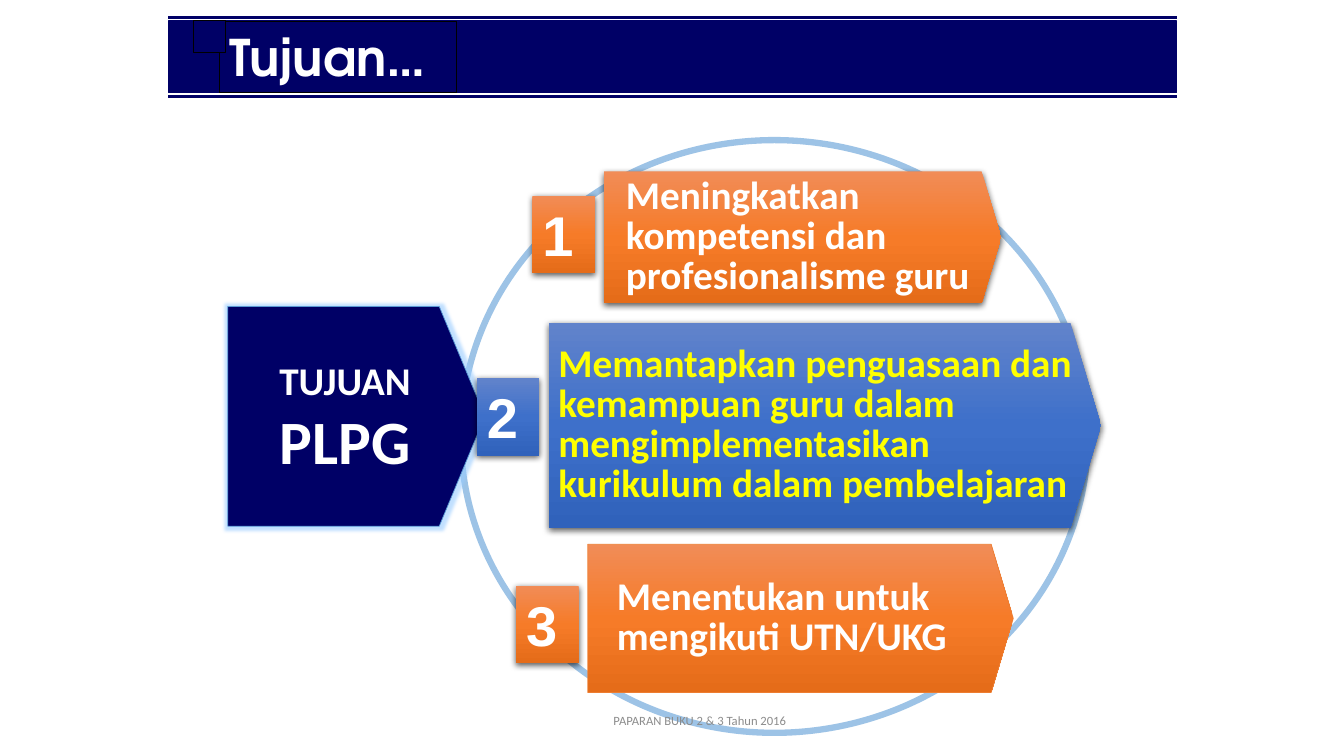
from lxml.etree import SubElement
from pptx import Presentation
from pptx.dml.color import RGBColor
from pptx.enum.shapes import MSO_CONNECTOR, MSO_SHAPE
from pptx.enum.text import MSO_ANCHOR, PP_ALIGN
from pptx.oxml.ns import qn
from pptx.util import Emu, Pt

# Content: lengths in px, 100 px to the inch
PX = 9144
SLIDE_SIZE = (1333, 750)
NAVY, WHITE, YELLOW, BLACK = "000066", "FFFFFF", "FFFF00", "000000"
ORANGE = ("F18C57", "F67B28", "E56C19")
BLUE = ("6183CB", "3E70CA", "3062BB")
CIRCLE_BOX = (457, 139, 622, 588)
GOAL_ADJUST = 0.149
TAG_SIZE = (62, 77)
TAG_GAP = 9  # between a number tag and its goal arrow

GOALS = [
    dict(text="Meningkatkan kompetensi dan profesionalisme guru",
         box=(599, 170, 394, 131), tag_top=194, indent=12,
         fill=ORANGE, color=WHITE, line=None),
    dict(text="Memantapkan penguasaan dan kemampuan guru dalam "
              "mengimplementasikan kurikulum dalam pembelajaran",
         box=(544, 320, 548, 204), tag_top=375, indent=0,
         fill=BLUE, color=YELLOW, line=None),
    dict(text="Menentukan untuk mengikuti UTN/UKG",
         box=(583, 540, 422, 147), tag_top=581, indent=19,
         fill=ORANGE, color=WHITE, line=("ED7D31", 0.5)),
]
LABEL_BOX = (226, 304, 255, 218)
LABEL_LINES = [("TUJUAN", 28), ("PLPG", 44)]
FOOTER, FOOTER_BOX = "PAPARAN BUKU 2 & 3 Tahun 2016", (525, 695, 338, 40)
TITLE = "Tujuan…"
BANNER_BOX = (167, 21, 1000, 71)
TITLE_BOX = (218, 21, 235, 71)
CORNER_BOX = (192, 20, 32, 32)
RULE_TOPS = (96, 17)


def rgb(value):
    return RGBColor.from_string(value)


def emu(*lengths):
    return [Emu(length * PX) for length in lengths]


def set_line(line, style):
    if style is None:
        line.fill.background()
    else:
        line.color.rgb = rgb(style[0])
        line.width = Pt(style[1])


def set_gradient(fill, colors):
    fill.gradient()
    fill.gradient_angle = 270
    stops = fill._xPr.find(qn("a:gradFill")).find(qn("a:gsLst"))
    for stop in list(stops):
        stops.remove(stop)
    for index, color in enumerate(colors):
        stop = SubElement(stops, qn("a:gs"), pos=str(index * 50000))
        SubElement(stop, qn("a:srgbClr"), val=color)


def add_effect(shape, name, color, alpha, **settings):
    effects = shape._element.spPr.find(qn("a:effectLst"))
    effect = SubElement(effects, qn(name), **settings)
    tint = SubElement(effect, qn("a:srgbClr"), val=color)
    SubElement(tint, qn("a:alpha"), val=str(alpha * 1000))


def add_shadow(shape):
    add_effect(shape, "a:outerShdw", BLACK, 63, blurRad=str(Pt(4.5)),
               dist=str(Pt(1.5)), dir="5400000", rotWithShape="0")


def add_box(kind, box, fill=None, line=None):
    shape = slide.shapes.add_shape(kind, *emu(*box))
    shape.shadow.inherit = False
    if fill is None:
        shape.fill.background()
    elif isinstance(fill, tuple):
        set_gradient(shape.fill, fill)
    else:
        shape.fill.solid()
        shape.fill.fore_color.rgb = rgb(fill)
    set_line(shape.line, line)
    return shape


def write(shape, lines, font, color, bold=True, align=PP_ALIGN.LEFT,
          anchor=MSO_ANCHOR.MIDDLE, wrap=True):
    frame = shape.text_frame
    frame.word_wrap = wrap
    frame.vertical_anchor = anchor
    for index, (text, size) in enumerate(lines):
        paragraph = frame.add_paragraph() if index else frame.paragraphs[0]
        paragraph.text = text
        paragraph.alignment = align
        paragraph.font.name = font
        paragraph.font.size = Pt(size)
        paragraph.font.bold = bold
        paragraph.font.color.rgb = rgb(color)
    return frame.paragraphs[0]


presentation = Presentation()
presentation.slide_width, presentation.slide_height = emu(*SLIDE_SIZE)
slide = presentation.slides.add_slide(presentation.slide_layouts[6])

# Circle behind the goals
add_box(MSO_SHAPE.OVAL, CIRCLE_BOX, line=("9DC3E6", 4.5))

# Goal arrows
for goal in GOALS:
    arrow = add_box(MSO_SHAPE.PENTAGON, goal["box"], goal["fill"], goal["line"])
    arrow.adjustments[0] = GOAL_ADJUST
    if goal["line"] is None:
        add_shadow(arrow)
    paragraph = write(arrow, [(goal["text"], 28)], "Calibri", goal["color"])
    paragraph.line_spacing = 0.85
    paragraph._p.get_or_add_pPr().set("marL", str(goal["indent"] * PX))

# Label arrow with a soft glow
label = add_box(MSO_SHAPE.PENTAGON, LABEL_BOX, NAVY, ("5B9BD5", 0.5))
label.adjustments[0] = 0.208
add_effect(label, "a:glow", "99CCFF", 60, rad=str(Pt(5)))
write(label, LABEL_LINES, "Calibri", WHITE, align=PP_ALIGN.CENTER)

# Number tags, each just left of its goal
for number, goal in enumerate(GOALS, 1):
    tag_left = goal["box"][0] - TAG_GAP - TAG_SIZE[0]
    tag = add_box(MSO_SHAPE.RECTANGLE, (tag_left, goal["tag_top"], *TAG_SIZE),
                  goal["fill"])
    add_shadow(tag)
    write(tag, [(str(number), 40)], "Arial", WHITE, anchor=MSO_ANCHOR.TOP)

# Footer
footer = slide.shapes.add_textbox(*emu(*FOOTER_BOX))
write(footer, [(FOOTER, 9)], "Calibri", "8C8C8C", bold=False,
      align=PP_ALIGN.CENTER)

# Title banner
add_box(MSO_SHAPE.RECTANGLE, BANNER_BOX, NAVY, (NAVY, 1))
title = add_box(MSO_SHAPE.RECTANGLE, TITLE_BOX, NAVY, (BLACK, 0.75))
write(title, [(TITLE, 36)], "TeX Gyre Adventor", WHITE,
      anchor=MSO_ANCHOR.TOP, wrap=False)
add_box(MSO_SHAPE.RECTANGLE, CORNER_BOX, NAVY, (BLACK, 0.75))

# Rules above and below the banner
for top in RULE_TOPS:
    left, right = BANNER_BOX[0], BANNER_BOX[0] + BANNER_BOX[2]
    rule = slide.shapes.add_connector(MSO_CONNECTOR.STRAIGHT,
                                      *emu(left, top, right, top))
    set_line(rule.line, (NAVY, 2.25))
    SubElement(rule._element.spPr, qn("a:effectLst"))

presentation.save("out.pptx")
